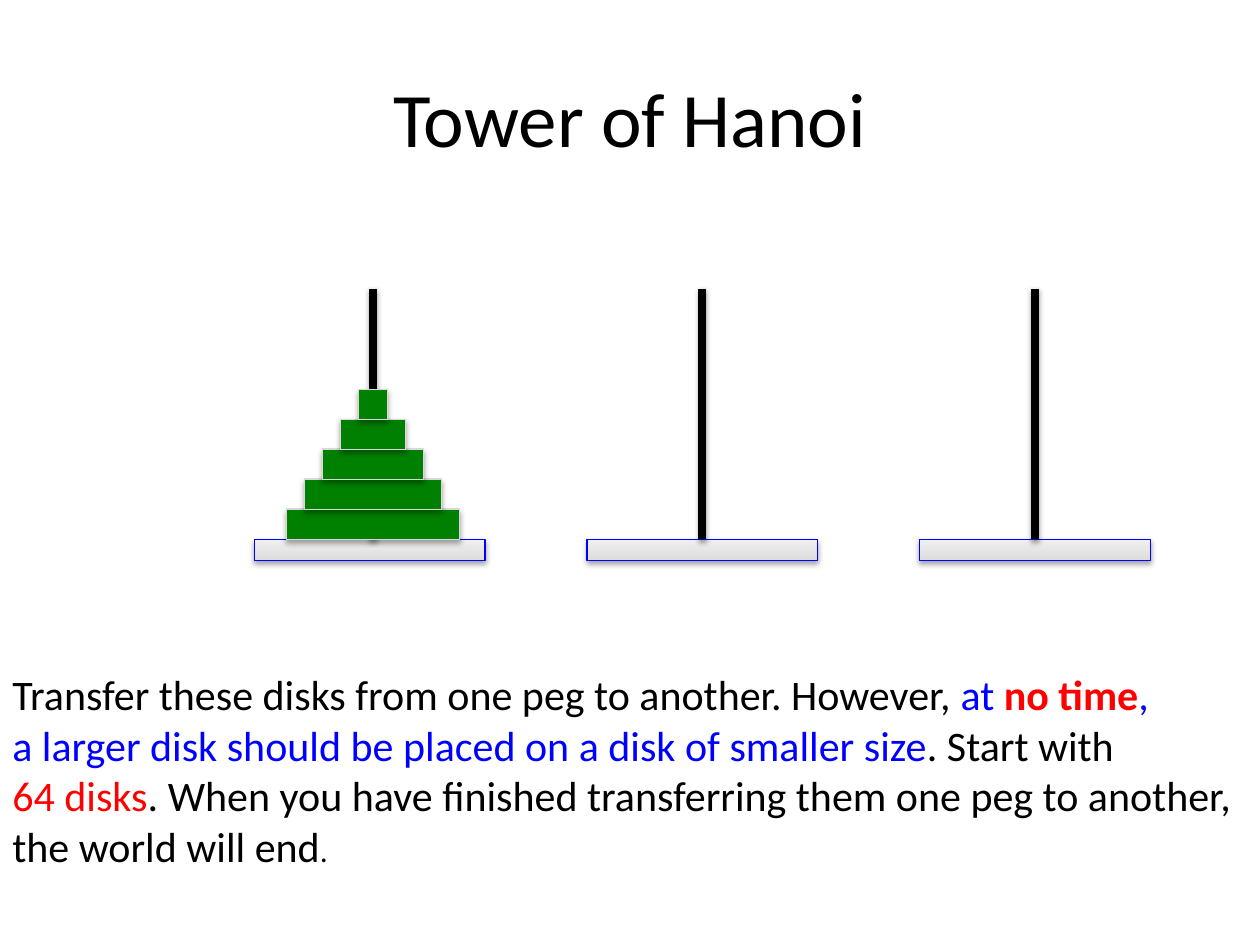
import dataclasses

import lxml.etree
import pptx
import pptx.dml.color
import pptx.enum.shapes
import pptx.enum.text
import pptx.oxml.ns
import pptx.util

Inches = pptx.util.Inches
Pt = pptx.util.Pt
qn = pptx.oxml.ns.qn


@dataclasses.dataclass(frozen=True)
class Theme:
    font: str = "Calibri"
    title_size: float = 44
    body_size: float = 24
    small_size: float = 18
    black: str = "000000"
    blue: str = "0000FF"
    red: str = "FF0000"
    disk: str = "008000"
    disk_edge: str = "D8D8D8"
    base_dark: str = "DDDDDD"
    base_light: str = "EFEFEF"
    thin: float = 0.75
    thick: float = 4.5


def rgb(value):
    return pptx.dml.color.RGBColor.from_string(value)


class Deck:
    def __init__(self, theme):
        self.theme = theme
        self.prs = pptx.Presentation()
        self.prs.slide_width = Inches(10)
        self.prs.slide_height = Inches(7.5)
        self.s = self.prs.slides.add_slide(self.prs.slide_layouts[5])

    def run(self, p, text, color, size, bold=False):
        r = p.add_run()
        r.text = text
        r.font.name = self.theme.font
        r.font.size = Pt(size)
        r.font.color.rgb = rgb(color)
        r.font.bold = bold

    def title(self, text, x, y, w, h):
        sp = self.s.shapes.title
        sp.left, sp.top, sp.width, sp.height = map(Inches, (x, y, w, h))
        tf = sp.text_frame
        tf.vertical_anchor = pptx.enum.text.MSO_ANCHOR.MIDDLE
        p = tf.paragraphs[0]
        p.alignment = pptx.enum.text.PP_ALIGN.CENTER
        self.run(p, text, self.theme.black, self.theme.title_size)

    def text(self, lines, x, y, w, h):
        sp = self.s.shapes.add_textbox(*map(Inches, (x, y, w, h)))
        tf = sp.text_frame
        tf.word_wrap = False
        tf.auto_size = pptx.enum.text.MSO_AUTO_SIZE.SHAPE_TO_FIT_TEXT
        for i, runs in enumerate(lines):
            p = tf.add_paragraph() if i else tf.paragraphs[0]
            for text, color, size, bold in runs:
                self.run(p, text, color, size, bold)

    def shadow(self, sp, distance, alpha):
        props = sp._element.spPr
        effects = props.find(qn("a:effectLst"))
        if effects is None:
            effects = lxml.etree.SubElement(props, qn("a:effectLst"))
        outer = lxml.etree.SubElement(
            effects, qn("a:outerShdw"), blurRad=str(Pt(3.1)),
            dist=str(Pt(distance)), dir="5400000", rotWithShape="0")
        color = lxml.etree.SubElement(outer, qn("a:srgbClr"), val=self.theme.black)
        lxml.etree.SubElement(color, qn("a:alpha"), val=str(alpha * 1000))

    def rect(self, x, y, w, h, edge):
        kind = pptx.enum.shapes.MSO_SHAPE.RECTANGLE
        sp = self.s.shapes.add_shape(kind, *map(Inches, (x, y, w, h)))
        sp.line.color.rgb = rgb(edge)
        sp.line.width = Pt(self.theme.thin)
        sp.shadow.inherit = False
        self.shadow(sp, 1.8, 35)
        return sp

    def base(self, x, y, w, h):
        sp = self.rect(x, y, w, h, self.theme.blue)
        sp.fill.gradient()
        sp.fill.gradient_angle = 90
        colors = (self.theme.base_dark, self.theme.base_light)
        for stop, color in zip(sp.fill.gradient_stops, colors):
            stop.color.rgb = rgb(color)
        return sp

    def disk(self, x, y, w, h):
        sp = self.rect(x, y, w, h, self.theme.disk_edge)
        sp.fill.solid()
        sp.fill.fore_color.rgb = rgb(self.theme.disk)

    def peg(self, x, top, bottom, base=None):
        kind = pptx.enum.shapes.MSO_CONNECTOR.STRAIGHT
        sp = self.s.shapes.add_connector(kind, *map(Inches, (x, top, x, bottom)))
        sp.line.color.rgb = rgb(self.theme.black)
        sp.line.width = Pt(self.theme.thick)
        if base is not None:
            sp.end_connect(base, 0)
        self.shadow(sp, 1.6, 38)


def main():
    t = Theme()
    deck = Deck(t)
    deck.title("Tower of Hanoi", 0.5, 0.3, 9, 1.25)

    floor, base_w = 4.28, 1.83
    base_lefts = [2.02 + 2.64 * i for i in range(3)]
    bases = [deck.base(x, floor, base_w, 0.17) for x in base_lefts]
    first_peg = 2.96
    deck.peg(first_peg, 2.29, floor)
    for x, base in zip(base_lefts[1:], bases[1:]):
        deck.peg(x + base_w / 2, 2.29, floor, base)

    disk_h = 0.24
    for i in range(5):
        w = 1.37 - 0.285 * i
        deck.disk(first_peg - w / 2, floor - disk_h - 0.2375 * i, w, disk_h)

    size = t.body_size
    deck.text([
        [("Transfer these disks from one peg to another. However, ", t.black, size, False),
         ("at ", t.blue, size, False),
         ("no time", t.red, size, True),
         (",", t.blue, size, False)],
        [("a larger disk should be placed on a disk of smaller size", t.blue, size, False),
         (". Start with", t.black, size, False)],
        [("64 disks", t.red, size, False),
         (". When you have finished transferring them one peg to another,", t.black, size, False)],
        [("the world will end", t.black, size, False),
         (".", t.black, t.small_size, False)],
    ], 0, 5.26, 9.97, 1.72)

    deck.prs.save("out.pptx")


if __name__ == "__main__":
    main()
